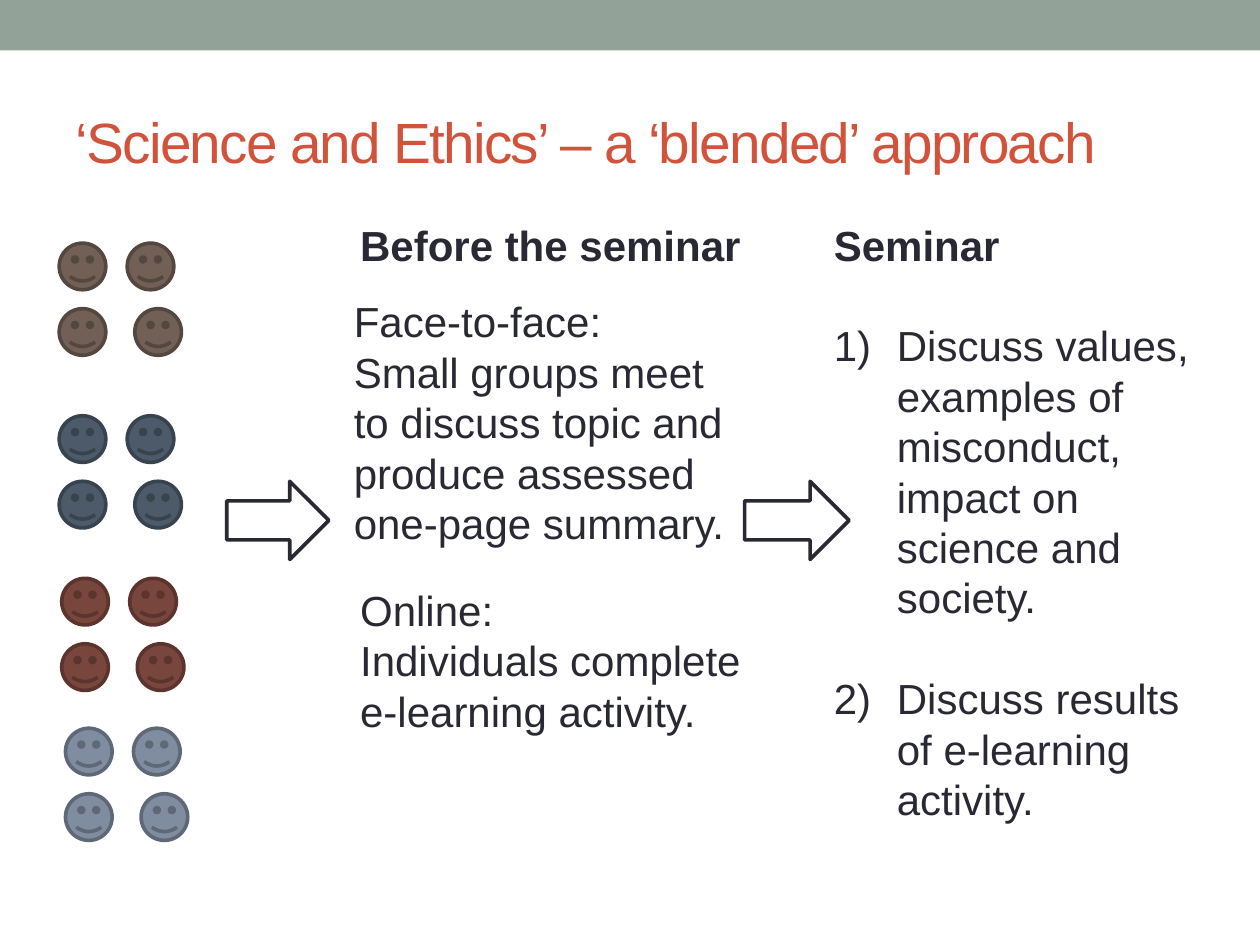
from pptx import Presentation
from pptx.dml.color import RGBColor
from pptx.enum.shapes import MSO_SHAPE
from pptx.enum.text import MSO_ANCHOR, MSO_AUTO_SIZE, PP_ALIGN
from pptx.oxml import parse_xml
from pptx.oxml.ns import nsdecls
from pptx.util import Inches, Pt

RECTANGLE = MSO_SHAPE.RECTANGLE
SMILEY = MSO_SHAPE.SMILEY_FACE
RIGHT_ARROW = MSO_SHAPE.RIGHT_ARROW
MIDDLE = MSO_ANCHOR.MIDDLE
NO_AUTOFIT = MSO_AUTO_SIZE.NONE
GROW = MSO_AUTO_SIZE.SHAPE_TO_FIT_TEXT
LEFT = PP_ALIGN.LEFT

BAND_GREEN = RGBColor(0x93, 0xA2, 0x99)
TITLE_RED = RGBColor(0xD2, 0x53, 0x3C)
INK = RGBColor(0x29, 0x29, 0x34)
WHITE = RGBColor(0xFF, 0xFF, 0xFF)
BROWN, BROWN_EDGE = RGBColor(0x72, 0x60, 0x56), RGBColor(0x54, 0x47, 0x40)
NAVY, NAVY_EDGE = RGBColor(0x4C, 0x5A, 0x6A), RGBColor(0x38, 0x43, 0x4E)
RUST, RUST_EDGE = RGBColor(0x79, 0x46, 0x3D), RGBColor(0x5A, 0x34, 0x2D)
STEEL, STEEL_EDGE = RGBColor(0x80, 0x8D, 0xA0), RGBColor(0x5F, 0x68, 0x76)

FONT = "Arial"
LINE_HEIGHT = Pt(28.8)
BODY_FORMAT = {"name": FONT, "size": Pt(24), "bold": False}
HEADING_FORMAT = {**BODY_FORMAT, "bold": True}
TITLE_FORMAT = {"name": FONT, "size": Pt(32.4), "bold": False}

FACE_SIZE = 0.37
FACE_OFFSETS = [(0, 0), (0.54, 0), (0, 0.52), (0.6, 0.52)]
# Each student group: left, top, fill, edge
STUDENT_GROUPS = [
    (0.47, 1.93, BROWN, BROWN_EDGE),
    (0.47, 3.3, NAVY, NAVY_EDGE),
    (0.49, 4.59, RUST, RUST_EDGE),
    (0.52, 5.78, STEEL, STEEL_EDGE),
]


def place(part, box):
    for side, length in zip(("left", "top", "width", "height"), box):
        setattr(part, side, Inches(length))


def add_filled_shape(slide, preset, box, fill, edge=None):
    shape = slide.shapes.add_shape(preset, *map(Inches, box))
    shape.shadow.inherit = False
    shape.fill.solid()
    shape.fill.fore_color.rgb = fill
    if edge is None:
        shape.line.fill.background()
    else:
        shape.line.color.rgb = edge
        shape.line.width = Pt(2.08)


def format_font(font, values, color):
    for attribute, value in values.items():
        setattr(font, attribute, value)
    font.color.rgb = color


def add_title(slide, box, wording):
    title = slide.shapes.title
    place(title, box)
    frame = title.text_frame
    frame.auto_size = NO_AUTOFIT
    frame.vertical_anchor = MIDDLE
    paragraph = frame.paragraphs[0]
    paragraph.alignment = LEFT
    run = paragraph.add_run()
    run.text = wording
    format_font(run.font, TITLE_FORMAT, TITLE_RED)
    run.font._element.set("spc", "-100")


def add_student_group(slide, left, top, fill, edge):
    for across, down in FACE_OFFSETS:
        box = (left + across, top + down, FACE_SIZE, FACE_SIZE)
        add_filled_shape(slide, SMILEY, box, fill, edge)


def add_text(slide, box, lines, values=BODY_FORMAT):
    frame = slide.shapes.add_textbox(*map(Inches, box)).text_frame
    frame.word_wrap = True
    frame.auto_size = GROW
    for index, line in enumerate(lines):
        paragraph = frame.add_paragraph() if index else frame.paragraphs[0]
        paragraph.line_spacing = LINE_HEIGHT
        run = paragraph.add_run()
        run.text = line
        format_font(run.font, values, INK)
    return frame


def number_paragraph(paragraph):
    paragraph.space_before = LINE_HEIGHT
    properties = paragraph._p.get_or_add_pPr()
    properties.set("marL", str(Inches(0.5)))
    properties.set("indent", str(-Inches(0.5)))
    properties.append(parse_xml(
        f'<a:buFont {nsdecls("a")} typeface="{FONT}"/>'))
    properties.append(parse_xml(
        f'<a:buAutoNum {nsdecls("a")} type="arabicParenR"/>'))


def add_seminar(slide, box, heading, activities):
    frame = add_text(slide, box, [heading, *activities])
    heading_line, *activity_lines = frame.paragraphs
    heading_line.runs[0].font.bold = True
    for activity in activity_lines:
        number_paragraph(activity)


def main():
    presentation = Presentation()
    presentation.slide_width = Inches(10)
    presentation.slide_height = Inches(7.5)
    slide = presentation.slides.add_slide(presentation.slide_layouts[5])

    # Top band and title
    add_filled_shape(slide, RECTANGLE, (0, 0, 10, 0.4), BAND_GREEN)
    add_title(slide, (0.5, 0.58, 9, 1.08),
              "‘Science and Ethics’ – a ‘blended’ approach")

    # Students in four groups
    for group in STUDENT_GROUPS:
        add_student_group(slide, *group)

    # Arrows between the stages
    for left, width in ((1.8, 0.81), (5.91, 0.83)):
        add_filled_shape(slide, RIGHT_ARROW, (left, 3.82, width, 0.62),
                         WHITE, INK)

    # Work before the seminar
    add_text(slide, (2.76, 1.69, 3.43, 0.5), ["Before the seminar"],
             HEADING_FORMAT)
    add_text(slide, (2.71, 2.3, 3.24, 2.1), [
        "Face-to-face:",
        "Small groups meet to discuss topic and produce assessed "
        "one-page summary.",
    ])
    add_text(slide, (2.76, 4.59, 3.31, 1.31), [
        "Online:", "Individuals complete", "e-learning activity."])

    # The seminar itself
    add_seminar(slide, (6.52, 1.69, 3.3, 4.14), "Seminar", [
        "Discuss values, examples of misconduct, impact on science "
        "and society.",
        "Discuss results of e-learning activity.",
    ])

    presentation.save("out.pptx")


if __name__ == "__main__":
    main()
